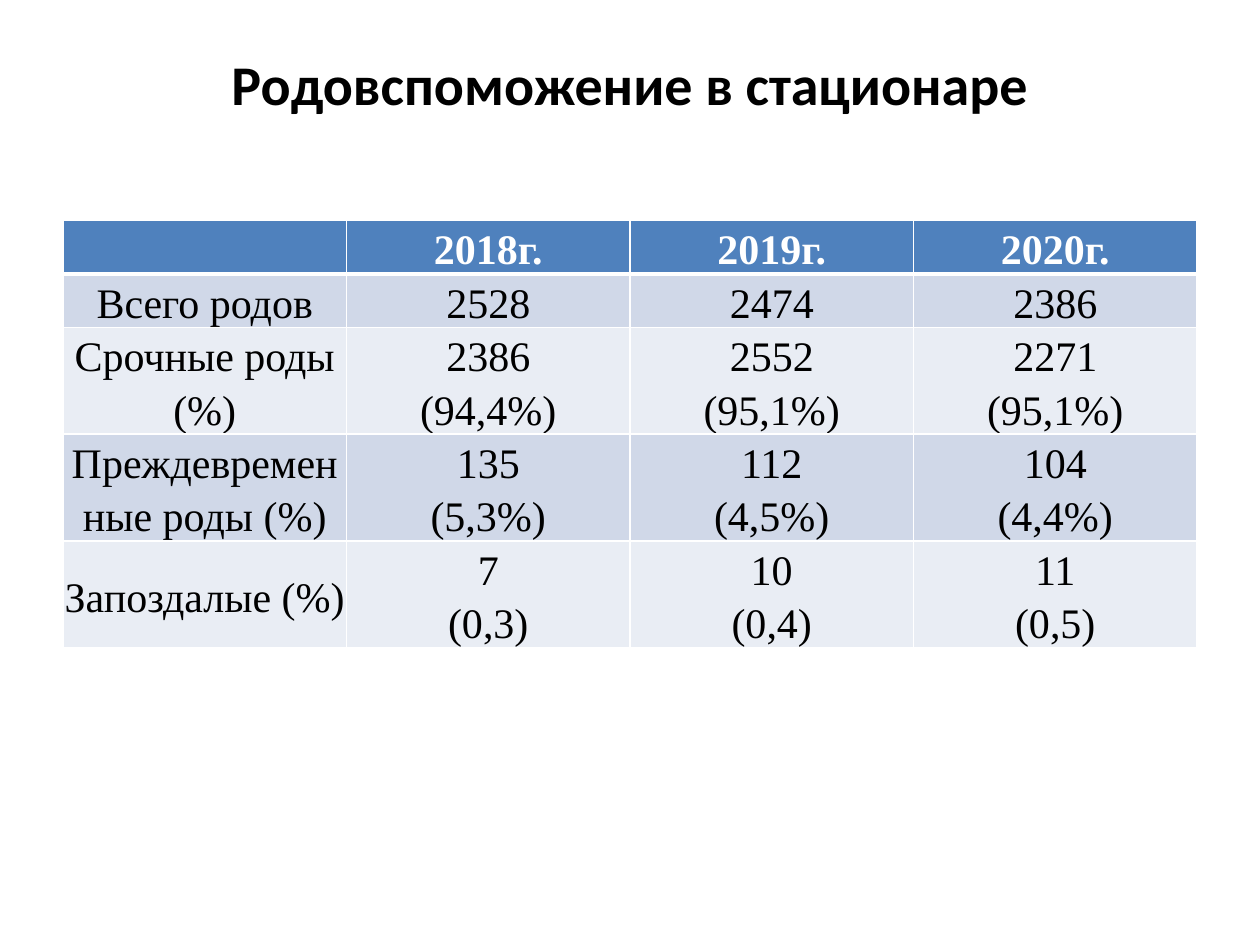
from pptx import Presentation
from pptx import util as u
from pptx.dml.color import RGBColor
from pptx.enum import text
from pptx.oxml import parse_xml
from pptx.oxml.ns import nsdecls

HEADER, BAND_DARK, BAND_LIGHT = "4F81BD", "D0D8E8", "E9EDF4"
WHITE, BLACK = "FFFFFF", "000000"
ROW_HEIGHT = 0.41

BIRTHS = [
    ["", "2018г.", "2019г.", "2020г."],
    ["Всего родов", "2528", "2474", "2386"],
    ["Срочные роды (%)", "2386\n(94,4%)", "2552\n(95,1%)", "2271\n(95,1%)"],
    ["Преждевременные роды (%)", "135\n(5,3%)", "112\n(4,5%)", "104\n(4,4%)"],
    ["Запоздалые (%)", "7\n(0,3)", "10\n(0,4)", "11\n(0,5)"],
]


def color(hex_value):
    return RGBColor.from_string(hex_value)


def apply(target, **values):
    for name, value in values.items():
        setattr(target, name, value)


def format_font(font, name, size, hex_value, bold):
    apply(font, name=name, size=u.Pt(size), bold=bold)
    font.color.rgb = color(hex_value)


def add_title(slide, heading):
    title = slide.shapes.title
    apply(title, left=u.Inches(0.5), top=u.Inches(0.3),
          width=u.Inches(9), height=u.Inches(1.25))
    title.text_frame.text = heading
    title.text_frame.vertical_anchor = text.MSO_ANCHOR.MIDDLE
    paragraph = title.text_frame.paragraphs[0]
    paragraph.alignment = text.PP_ALIGN.CENTER
    format_font(paragraph.font, "Calibri", 32, BLACK, True)
    for run in paragraph.runs:
        format_font(run.font, "Calibri", 32, BLACK, True)


def set_borders(cell, **widths):
    properties = cell._tc.get_or_add_tcPr()
    for side, width in widths.items():
        properties.append(parse_xml(
            f'<a:ln{side} {nsdecls("a")} w="{u.Pt(width)}"><a:solidFill>'
            f'<a:srgbClr val="{WHITE}"/></a:solidFill></a:ln{side}>'))


def fill_cell(cell, content, row, column):
    # The rule under the header is heavier than the rest
    set_borders(cell, L=1, R=1, T=3 if row == 1 else 1, B=3 if row == 0 else 1)
    cell.fill.solid()
    band = BAND_DARK if row % 2 else BAND_LIGHT
    cell.fill.fore_color.rgb = color(band if row else HEADER)
    anchor = text.MSO_ANCHOR.TOP if column == 2 else text.MSO_ANCHOR.MIDDLE
    apply(cell, margin_left=0, margin_right=0, margin_top=0, margin_bottom=0,
          vertical_anchor=anchor)
    cell.text = content
    paragraphs = cell.text_frame.paragraphs
    for paragraph in paragraphs:
        spaced = row <= 2 and len(paragraphs) == 1
        apply(paragraph, alignment=text.PP_ALIGN.CENTER, line_spacing=1.15,
              space_after=u.Pt(10 if spaced else 0))
        for run in paragraph.runs:
            format_font(run.font, "Times New Roman", 24,
                        BLACK if row else WHITE, row == 0)


def add_births_table(slide, records):
    table = slide.shapes.add_table(
        len(records), len(records[0]), u.Inches(0.5), u.Inches(1.75),
        u.Inches(9), u.Inches(ROW_HEIGHT * len(records))).table
    for row, record in enumerate(records):
        for column, content in enumerate(record):
            fill_cell(table.cell(row, column), content, row, column)


def main():
    deck = Presentation()
    apply(deck, slide_width=u.Inches(10), slide_height=u.Inches(7.5))
    slide = deck.slides.add_slide(deck.slide_layouts[5])  # title only
    add_title(slide, "Родовспоможение в стационаре\v")
    add_births_table(slide, BIRTHS)
    deck.save("out.pptx")


if __name__ == "__main__":
    main()
